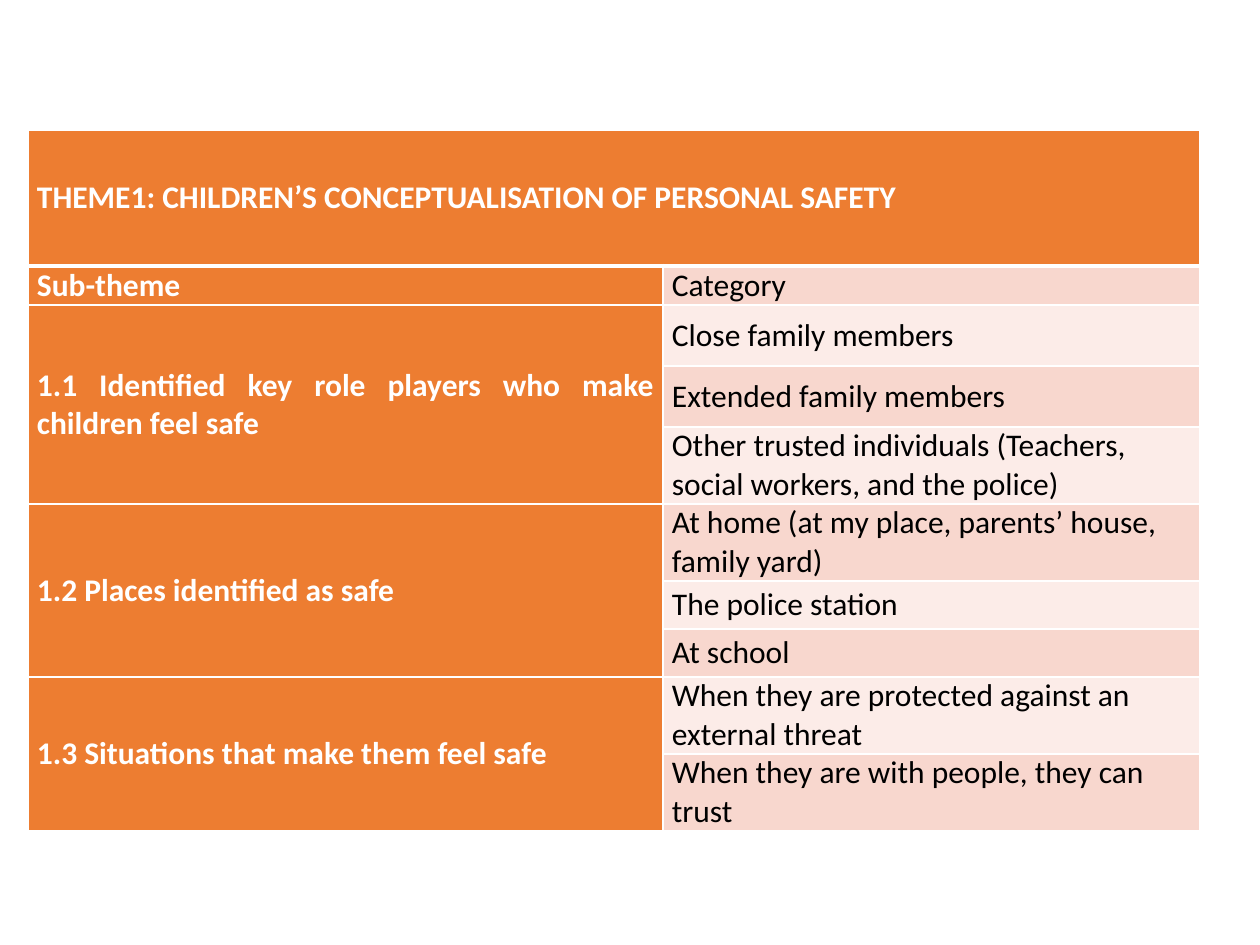
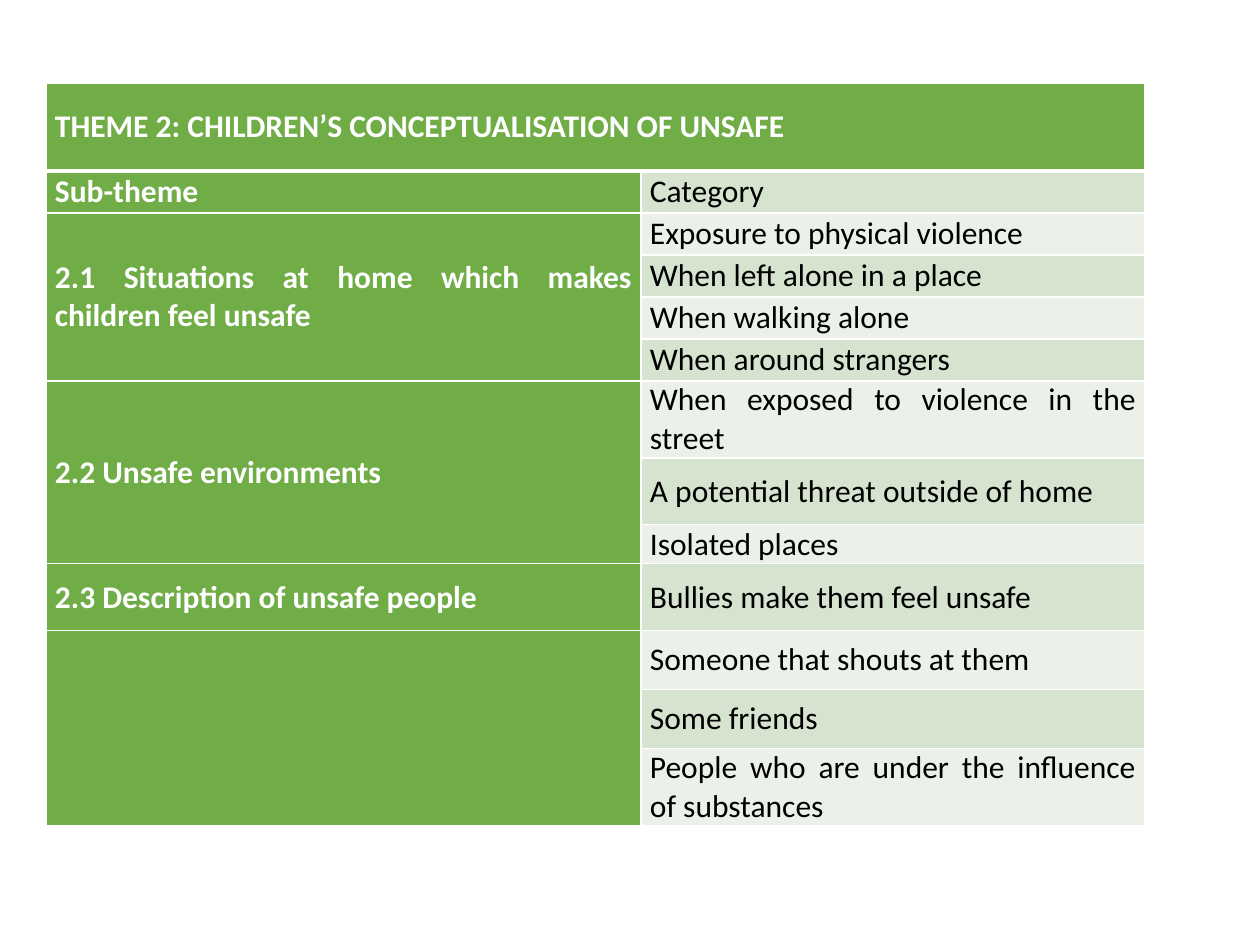
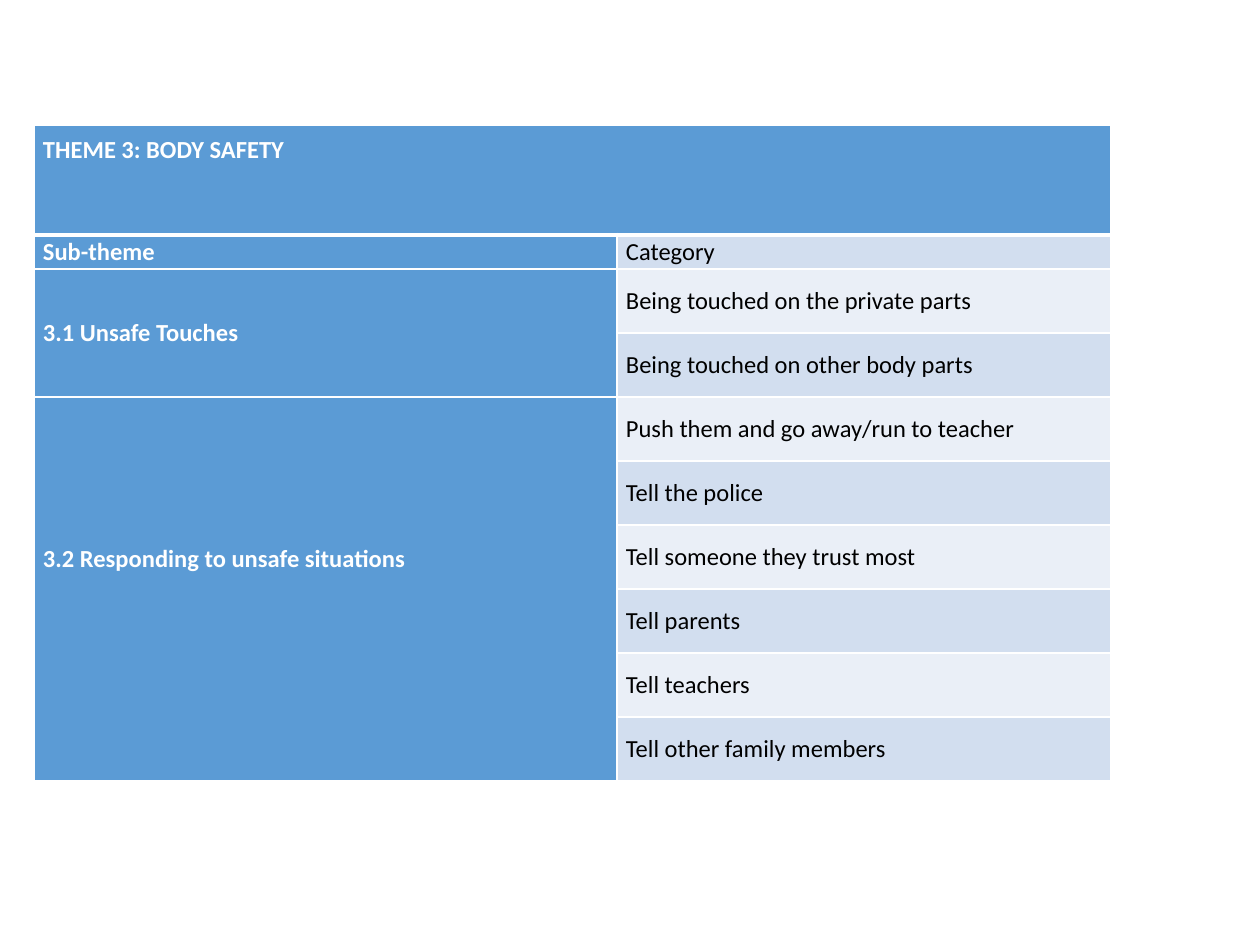
from dataclasses import dataclass

from lxml.etree import SubElement
from pptx import Presentation
from pptx.dml.color import RGBColor
from pptx.enum.text import MSO_ANCHOR, PP_ALIGN
from pptx.oxml.ns import qn
from pptx.util import Emu, Pt

FONT = "Calibri"
WHITE = RGBColor(0xFF, 0xFF, 0xFF)
BLACK = RGBColor(0x00, 0x00, 0x00)
ORANGE = RGBColor(0xED, 0x7D, 0x31)
ORANGE_BANDS = (RGBColor(0xFC, 0xEC, 0xE8), RGBColor(0xF8, 0xD7, 0xCE))
GREEN = RGBColor(0x70, 0xAD, 0x47)
GREEN_BANDS = (RGBColor(0xEB, 0xF1, 0xE9), RGBColor(0xD5, 0xE3, 0xCF))
BLUE = RGBColor(0x5B, 0x9B, 0xD5)
BLUE_BANDS = (RGBColor(0xEA, 0xEF, 0xF7), RGBColor(0xD2, 0xDE, 0xEF))

PX_PER_INCH = 126
SIDE_MARGIN = 9
RULE, HEAD_RULE = 1, 3  # border widths in points


@dataclass
class Theme:
    title: str
    groups: list  # (sub-theme, categories)
    heights: list
    place: tuple  # left, top
    widths: tuple
    color: RGBColor
    bands: tuple
    size: int = 18
    category_align: PP_ALIGN = PP_ALIGN.LEFT
    raised: tuple = ()  # texts set above the middle of their cell


THEMES = [
    Theme(
        "THEME1: CHILDREN’S CONCEPTUALISATION OF PERSONAL SAFETY",
        [("1.1 Identified key role players who make children feel safe",
          ["Close family members",
           "Extended family members",
           "Other trusted individuals (Teachers, social workers, and the police)"]),
         ("1.2 Places identified as safe",
          ["At home (at my place, parents’ house, family yard)",
           "The police station",
           "At school"]),
         ("1.3 Situations that make them feel safe",
          ["When they are protected against an external threat",
           "When they are with people, they can trust"])],
        [136, 39, 61, 61, 77, 77, 48, 48, 77, 77],
        (28, 130), (635, 537), ORANGE, ORANGE_BANDS),
    Theme(
        "THEME 2: CHILDREN’S CONCEPTUALISATION OF UNSAFE",
        [("2.1 Situations at home which makes children feel unsafe",
          ["Exposure to physical violence",
           "When left alone in a place",
           "When walking alone",
           "When around strangers"]),
         ("2.2 Unsafe environments",
          ["When exposed to violence in the street",
           "A potential threat outside of home",
           "Isolated places"]),
         ("2.3 Description of unsafe people",
          ["Bullies make them feel unsafe"]),
         ("",
          ["Someone that shouts at them",
           "Some friends",
           "People who are under the influence of substances"])],
        [88] + [42] * 5 + [77, 67, 39, 67, 59, 59, 77],
        (46, 83), (595, 504), GREEN, GREEN_BANDS,
        category_align=PP_ALIGN.JUSTIFY),
    Theme(
        "THEME 3: BODY SAFETY",
        [("3.1 Unsafe Touches",
          ["Being touched on the private parts",
           "Being touched on other body parts"]),
         ("3.2 Responding to unsafe situations",
          ["Push them and go away/run to teacher",
           "Tell the police",
           "Tell someone they trust most",
           "Tell parents",
           "Tell teachers",
           "Tell other family members"])],
        [110, 34] + [64] * 8,
        (34, 125), (583, 494), BLUE, BLUE_BANDS, size=14,
        raised=("THEME 3: BODY SAFETY", "3.2 Responding to unsafe situations")),
]


def px(n):
    return Emu(round(n * 914400 / PX_PER_INCH))


def set_borders(cell, top, bottom):
    """White rules on all four sides; they must precede the fill."""
    tc_pr = cell._tc.get_or_add_tcPr()
    sides = {"lnL": RULE, "lnR": RULE, "lnT": top, "lnB": bottom}
    for i, (side, width) in enumerate(sides.items()):
        ln = SubElement(tc_pr, qn(f"a:{side}"), w=str(Pt(width)))
        fill = SubElement(ln, qn("a:solidFill"))
        SubElement(fill, qn("a:srgbClr"), val=str(WHITE))
        tc_pr.insert(i, ln)


def style_cell(cell, size, fill, color, bold, align):
    cell.fill.solid()
    cell.fill.fore_color.rgb = fill
    cell.vertical_anchor = MSO_ANCHOR.MIDDLE
    cell.margin_left = cell.margin_right = px(SIDE_MARGIN)
    cell.margin_top = cell.margin_bottom = 0
    p = cell.text_frame.paragraphs[0]
    p.alignment = align
    p.font.name, p.font.size = FONT, Pt(size)
    p.font.bold, p.font.color.rgb = bold, color


def write(cell, text, theme):
    if text:
        cell.text_frame.paragraphs[0].add_run().text = text
    if text in theme.raised:
        cell.margin_bottom = px(60)


def add_theme_table(slide, theme):
    left, top = theme.place
    frame = slide.shapes.add_table(
        len(theme.heights), 2, px(left), px(top),
        px(sum(theme.widths)), px(sum(theme.heights)))
    table = frame.table
    table.first_row = table.horz_banding = False
    for column, width in zip(table.columns, theme.widths):
        column.width = px(width)

    # Colours, type and rules
    for i, height in enumerate(theme.heights):
        table.rows[i].height = px(height)
        for j in range(2):
            cell = table.cell(i, j)
            if i == 0 or j == 0:
                style_cell(cell, theme.size, theme.color, WHITE, True,
                           PP_ALIGN.JUSTIFY)
            else:
                style_cell(cell, theme.size, theme.bands[i % 2], BLACK, False,
                           theme.category_align)
            set_borders(cell, HEAD_RULE if i == 1 else RULE,
                        HEAD_RULE if i == 0 else RULE)

    # Heading rows
    table.cell(0, 0).merge(table.cell(0, 1))
    write(table.cell(0, 0), theme.title, theme)
    write(table.cell(1, 0), "Sub-theme", theme)
    write(table.cell(1, 1), "Category", theme)

    # Sub-themes with their categories
    row = 2
    for sub_theme, categories in theme.groups:
        last = row + len(categories) - 1
        if last > row:
            table.cell(row, 0).merge(table.cell(last, 0))
        write(table.cell(row, 0), sub_theme, theme)
        for i, category in enumerate(categories, row):
            write(table.cell(i, 1), category, theme)
        row = last + 1


def main():
    prs = Presentation()
    prs.slide_width, prs.slide_height = px(1260), px(945)
    blank = prs.slide_layouts[6]
    for theme in THEMES:
        add_theme_table(prs.slides.add_slide(blank), theme)
    prs.save("out.pptx")


if __name__ == "__main__":
    main()
